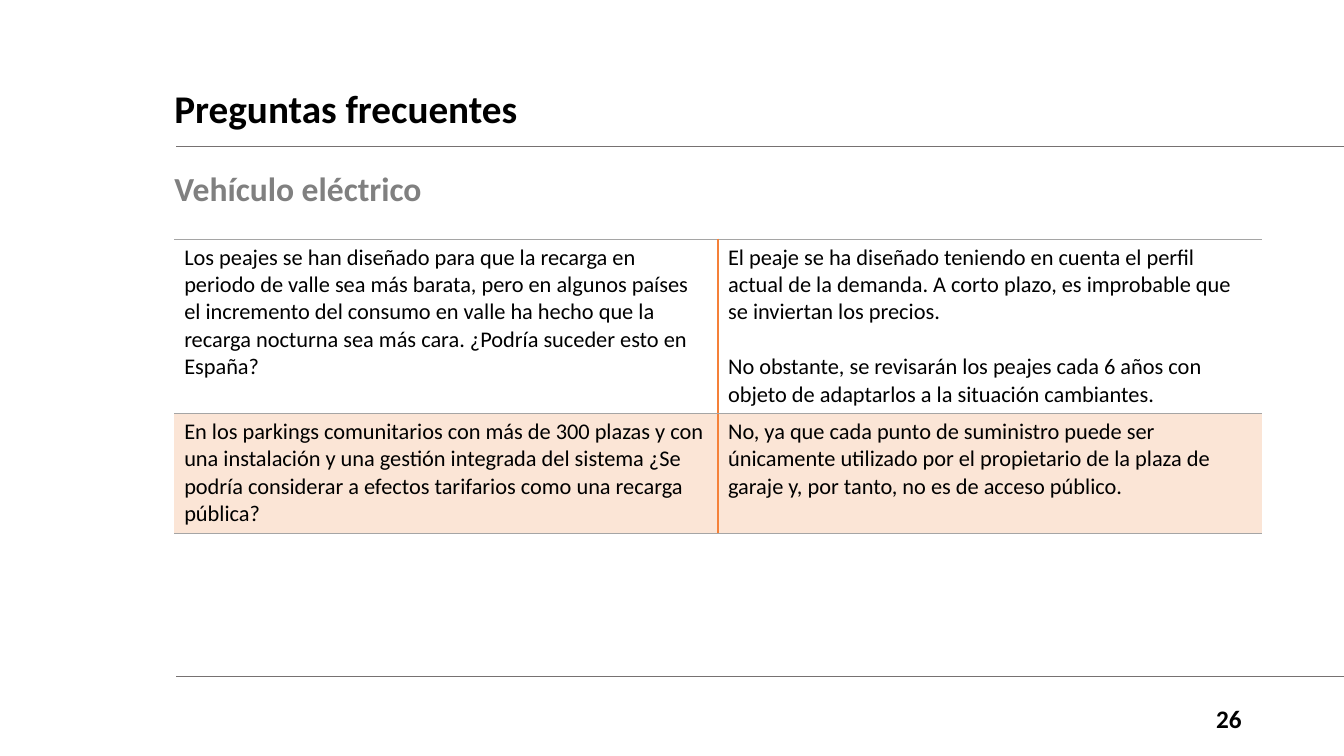
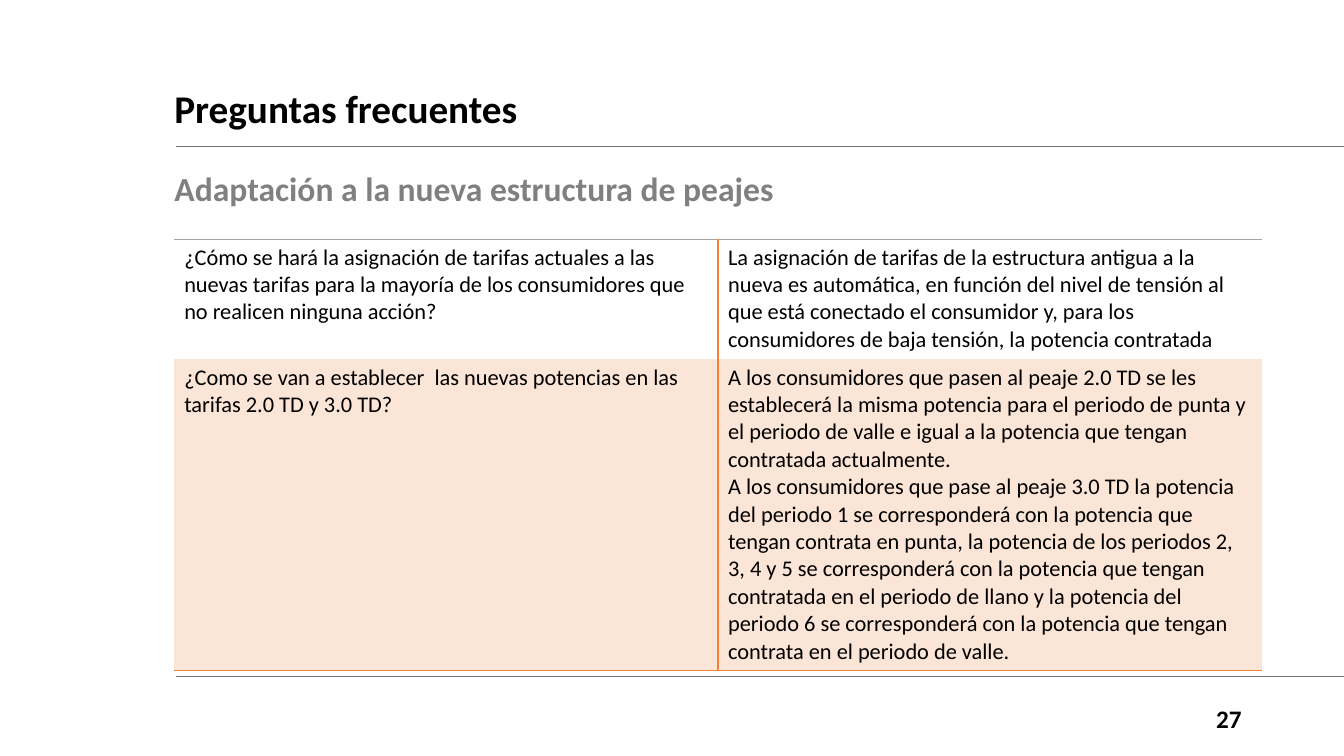
from lxml.etree import SubElement
from pptx import Presentation
from pptx.dml.color import RGBColor
from pptx.enum.shapes import MSO_CONNECTOR
from pptx.enum.text import MSO_ANCHOR, MSO_AUTO_SIZE, PP_ALIGN
from pptx.oxml.ns import qn
from pptx.util import Pt

BLACK = RGBColor(0x00, 0x00, 0x00)
SUBTITLE_GRAY = RGBColor(0x80, 0x80, 0x80)
RULE_GRAY = RGBColor(0x76, 0x71, 0x71)
BORDER_GRAY = RGBColor(0xA5, 0xA5, 0xA5)
ORANGE = RGBColor(0xF5, 0x81, 0x39)
PALE_ORANGE = RGBColor(0xFB, 0xE5, 0xD6)

FONT = "Calibri"
SLIDE_WIDTH, SLIDE_HEIGHT = 960, 540
LEFT, WIDTH = 117.4, 777
TABLE_LEFT, TABLE_TOP = 124.4, 170.6
RULE_LEFT = 126
RULE_TOPS = (104.5, 483)
LINE_GAP = 19.5

TITLE_FORMAT = {"size": Pt(28), "bold": True, "color": BLACK}
SUBTITLE_FORMAT = {"size": Pt(24), "bold": True, "color": SUBTITLE_GRAY}
NUMBER_FORMAT = {"size": Pt(18), "bold": True, "color": BLACK}
CELL_FORMAT = {"size": Pt(16), "bold": False, "color": BLACK}

GRAY_BORDER = (BORDER_GRAY, 0.5)
ORANGE_BORDER = (ORANGE, 1)

# Horizontal borders run from the top of the table to its bottom.
SLIDES = [
    {
        "number": "26",
        "subtitle": "Vehículo eléctrico",
        "heights": (124.3, 85.7),
        "borders": (GRAY_BORDER, GRAY_BORDER, GRAY_BORDER),
        "answer_gap": LINE_GAP,
        "rows": [
            (
                ["Los peajes se han diseñado para que la recarga en periodo de valle sea más "
                 "barata, pero en algunos países el incremento del consumo en valle ha hecho que "
                 "la recarga nocturna sea más cara. ¿Podría suceder esto en España?"],
                ["El peaje se ha diseñado teniendo en cuenta el perfil actual de la demanda. "
                 "A corto plazo, es improbable que se inviertan los precios.",
                 "No obstante, se revisarán los peajes cada 6 años con objeto de adaptarlos "
                 "a la situación cambiantes."],
            ),
            (
                ["En los parkings comunitarios con más de 300 plazas y con una instalación y una "
                 "gestión integrada del sistema ¿Se podría considerar a efectos tarifarios como "
                 "una recarga pública?"],
                ["No, ya que cada punto de suministro puede ser únicamente utilizado por el "
                 "propietario de la plaza de garaje y, por tanto, no es de acceso público."],
            ),
        ],
    },
    {
        "number": "27",
        "subtitle": "Adaptación a la nueva estructura de peajes",
        "heights": (85.7, 222),
        "borders": (GRAY_BORDER, None, ORANGE_BORDER),
        "answer_gap": 0,
        "rows": [
            (
                ["¿Cómo se hará la asignación de tarifas actuales a las nuevas tarifas para la "
                 "mayoría de los consumidores que no realicen ninguna acción?"],
                ["La asignación de tarifas de la estructura antigua a la nueva es automática, en "
                 "función del nivel de tensión al que está conectado el consumidor y, para los "
                 "consumidores de baja tensión, la potencia contratada"],
            ),
            (
                ["¿Como se van a establecer  las nuevas potencias en las tarifas 2.0 TD y 3.0 TD?"],
                ["A los consumidores que pasen al peaje 2.0 TD se les establecerá la misma "
                 "potencia para el periodo de punta y el periodo de valle e igual a la potencia "
                 "que tengan contratada actualmente.",
                 "A los consumidores que pase al peaje 3.0 TD la potencia del periodo 1 se "
                 "corresponderá con la potencia que tengan contrata en punta, la potencia de los "
                 "periodos 2, 3, 4 y 5 se corresponderá con la potencia que tengan contratada en "
                 "el periodo de llano y la potencia del periodo 6 se corresponderá con la "
                 "potencia que tengan contrata en el periodo de valle."],
            ),
        ],
    },
]


def place(shape, left, top, width, height):
    box = {"left": left, "top": top, "width": width, "height": height}
    for name, value in box.items():
        setattr(shape, name, Pt(value))


def write(paragraph, text, text_format, **paragraph_format):
    for name, value in paragraph_format.items():
        setattr(paragraph, name, value)
    run = paragraph.add_run()
    run.text = text
    run.font.name = FONT
    for name, value in text_format.items():
        if name == "color":
            run.font.color.rgb = value
        else:
            setattr(run.font, name, value)


def set_frame(shape, anchor):
    frame = shape.text_frame
    settings = {"word_wrap": True, "auto_size": MSO_AUTO_SIZE.NONE, "vertical_anchor": anchor}
    for name, value in settings.items():
        setattr(frame, name, value)
    return frame.paragraphs[0]


def add_title(slide, text):
    title = slide.shapes.title
    place(title, LEFT, 49, WIDTH, 59.8)
    write(set_frame(title, MSO_ANCHOR.MIDDLE), text, TITLE_FORMAT,
          alignment=PP_ALIGN.LEFT, line_spacing=0.9)


def add_subtitle(slide, text):
    body = slide.placeholders[1]
    place(body, LEFT, 119.5, WIDTH, 39.6)
    paragraph = set_frame(body, MSO_ANCHOR.TOP)
    properties = paragraph._p.get_or_add_pPr()
    properties.set("marL", "0")
    properties.set("indent", "0")
    SubElement(properties, qn("a:buNone"))
    write(paragraph, text, SUBTITLE_FORMAT,
          line_spacing=0.9, space_before=Pt(0), space_after=Pt(12))


def add_rule(slide, top):
    rule = slide.shapes.add_connector(
        MSO_CONNECTOR.STRAIGHT, Pt(RULE_LEFT), Pt(top), Pt(SLIDE_WIDTH), Pt(top))
    rule.line.color.rgb = RULE_GRAY
    rule.line.width = Pt(0.5)
    SubElement(rule._element.spPr, qn("a:effectLst"))


def add_slide_number(slide, number):
    box = slide.shapes.add_textbox(Pt(843), Pt(499), Pt(51), Pt(28.8))
    write(set_frame(box, MSO_ANCHOR.MIDDLE), number, NUMBER_FORMAT, alignment=PP_ALIGN.RIGHT)


def set_border(cell, edge, border):
    """Draw one cell edge (L, R, T or B); a border of None hides it."""
    line = SubElement(cell._tc.get_or_add_tcPr(), qn(f"a:ln{edge}"))
    if border is None:
        SubElement(line, qn("a:noFill"))
        return
    color, width = border
    line.set("w", str(Pt(width)))
    fill = SubElement(line, qn("a:solidFill"))
    SubElement(fill, qn("a:srgbClr")).set("val", str(color))


def fill_cell(cell, texts, gap, borders, shaded):
    for index, text in enumerate(texts):
        frame = cell.text_frame
        paragraph = frame.add_paragraph() if index else frame.paragraphs[0]
        write(paragraph, text, CELL_FORMAT, space_before=Pt(gap if index else 0))
    for edge, border in borders.items():
        set_border(cell, edge, border)
    if shaded:
        cell.fill.solid()
        cell.fill.fore_color.rgb = PALE_ORANGE
    else:
        cell.fill.background()


def add_questions(slide, rows, heights, borders, answer_gap):
    table = slide.shapes.add_table(
        len(rows), 2, Pt(TABLE_LEFT), Pt(TABLE_TOP), Pt(WIDTH), Pt(sum(heights))).table
    table.first_row = table.horz_banding = False
    for row_index, (row, height) in enumerate(zip(rows, heights)):
        table.rows[row_index].height = Pt(height)
        for column, texts in enumerate(row):
            edges = {
                "L": ORANGE_BORDER if column == 1 else None,
                "R": ORANGE_BORDER if column == 0 else None,
                "T": borders[row_index],
                "B": borders[row_index + 1],
            }
            fill_cell(table.cell(row_index, column), texts, answer_gap, edges,
                      shaded=row_index % 2 == 1)


def main():
    presentation = Presentation()
    presentation.slide_width = Pt(SLIDE_WIDTH)
    presentation.slide_height = Pt(SLIDE_HEIGHT)
    for content in SLIDES:
        slide = presentation.slides.add_slide(presentation.slide_layouts[1])
        for top in RULE_TOPS:
            add_rule(slide, top)
        add_slide_number(slide, content["number"])
        add_title(slide, "Preguntas frecuentes")
        add_subtitle(slide, content["subtitle"])
        add_questions(slide, content["rows"], content["heights"],
                      content["borders"], content["answer_gap"])
    presentation.save("out.pptx")


if __name__ == "__main__":
    main()
